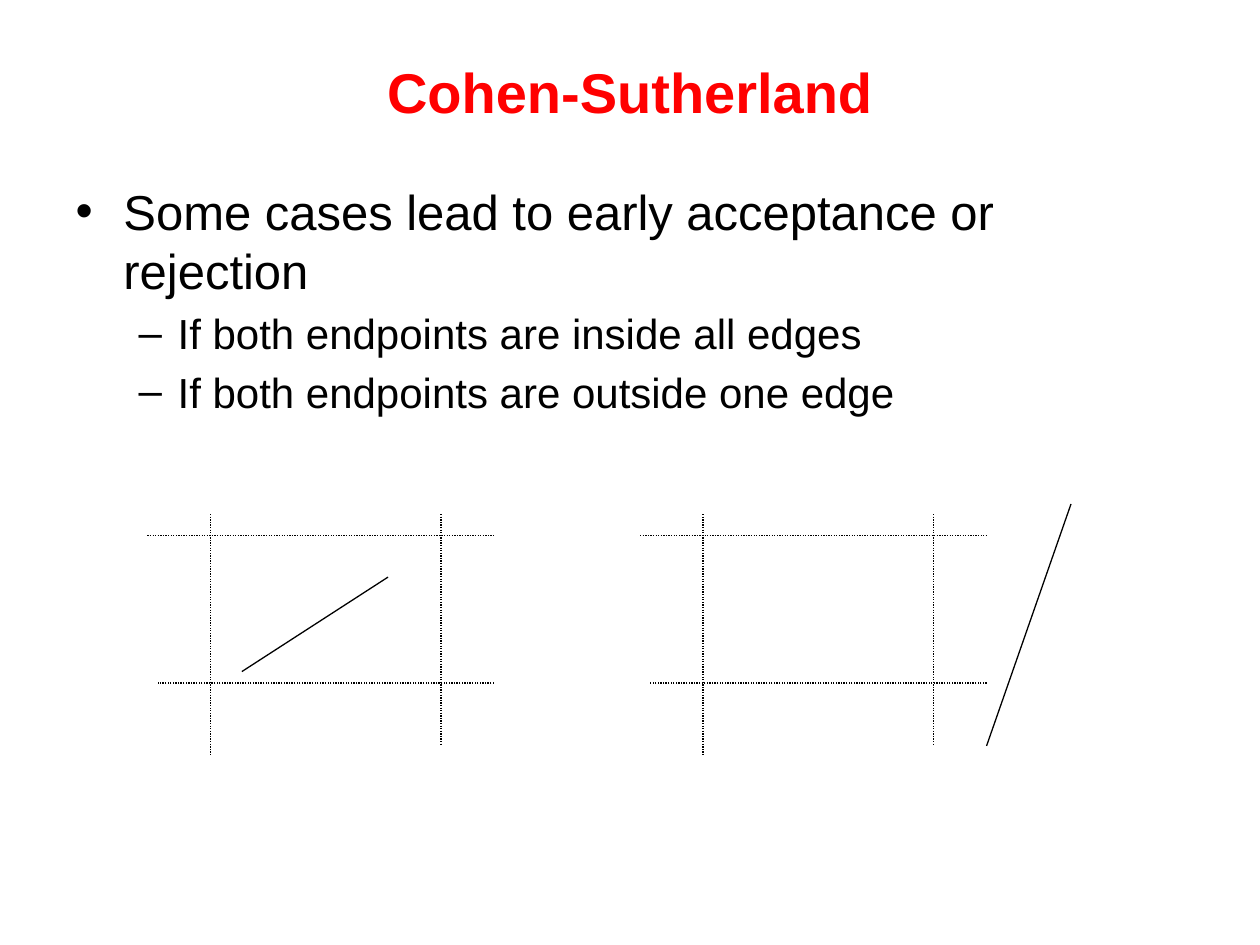
from lxml.etree import SubElement
from pptx import Presentation
from pptx.dml.color import RGBColor
from pptx.enum.dml import MSO_LINE
from pptx.enum.shapes import MSO_CONNECTOR
from pptx.enum.text import MSO_ANCHOR, MSO_AUTO_SIZE, PP_ALIGN
from pptx.oxml.ns import qn
from pptx.util import Inches, Pt

BULLETS = [
    (0, "Some cases lead to early acceptance or rejection"),
    (1, "If both endpoints are inside all edges"),
    (1, "If both endpoints are outside one edge"),
]
# Per level: bullet character, font size, left margin, hanging indent
LEVELS = [("•", 28, 0.38, 0.38), ("–", 24, 0.81, 0.31)]
# Clip window edges, measured from the left end of the top edge
WINDOW_EDGES = [
    ((0, 4.25), (2.75, 4.25)),
    ((2.33, 4.08), (2.33, 5.92)),
    ((2.75, 5.42), (0.08, 5.42)),
    ((0.5, 4.08), (0.5, 6)),
]


def rgb(value):
    return RGBColor.from_string(value)


def write(p, text, size, color="000000", bold=False, align=PP_ALIGN.LEFT):
    p.alignment = align
    r = p.add_run()
    r.text = text
    r.font.name = "Arial"
    r.font.size = Pt(size)
    r.font.bold = bold
    r.font.color.rgb = rgb(color)


def place(sp, left, top, width, height, anchor):
    sp.left, sp.top = Inches(left), Inches(top)
    sp.width, sp.height = Inches(width), Inches(height)
    tf = sp.text_frame
    tf.word_wrap = True
    tf.auto_size = MSO_AUTO_SIZE.NONE
    tf.vertical_anchor = anchor
    return tf


def add_bullet(p, level, text):
    char, size, margin, hang = LEVELS[level]
    p.level = level
    p.space_before = Pt(size * 0.2)
    write(p, text, size)
    pPr = p._p.get_or_add_pPr()
    pPr.set("marL", str(Inches(margin)))
    pPr.set("indent", str(-Inches(hang)))
    SubElement(pPr, qn("a:buChar")).set("char", char)


def add_line(slide, start, end, dash=None):
    ends = [Inches(v) for v in (*start, *end)]
    line = slide.shapes.add_connector(MSO_CONNECTOR.STRAIGHT, *ends)
    line.line.color.rgb = rgb("000000")
    line.line.width = Pt(0.75)
    if dash:
        line.line.dash_style = dash
    SubElement(line._element.spPr, qn("a:effectLst"))


def add_clip_case(slide, left, start, end):
    """Draw a tested segment and the dotted edges of its clip window."""
    add_line(slide, start, end)
    for (x1, y1), (x2, y2) in WINDOW_EDGES:
        add_line(slide, (left + x1, y1), (left + x2, y2), MSO_LINE.ROUND_DOT)


def main():
    prs = Presentation()
    prs.slide_width, prs.slide_height = Inches(10), Inches(7.5)
    slide = prs.slides.add_slide(prs.slide_layouts[1])

    tf = place(slide.shapes.title, 0.5, 0.3, 9, 0.85, MSO_ANCHOR.MIDDLE)
    write(tf.paragraphs[0], "Cohen-Sutherland", 32, color="FF0000",
          bold=True, align=PP_ALIGN.CENTER)

    tf = place(slide.placeholders[1], 0.5, 1.39, 9, 5.31, MSO_ANCHOR.TOP)
    for i, (level, text) in enumerate(BULLETS):
        p = tf.add_paragraph() if i else tf.paragraphs[0]
        add_bullet(p, level, text)

    add_clip_case(slide, 1.17, (1.92, 5.33), (3.08, 4.58))
    add_clip_case(slide, 5.08, (7.83, 5.92), (8.5, 4))
    prs.save("out.pptx")


if __name__ == "__main__":
    main()
